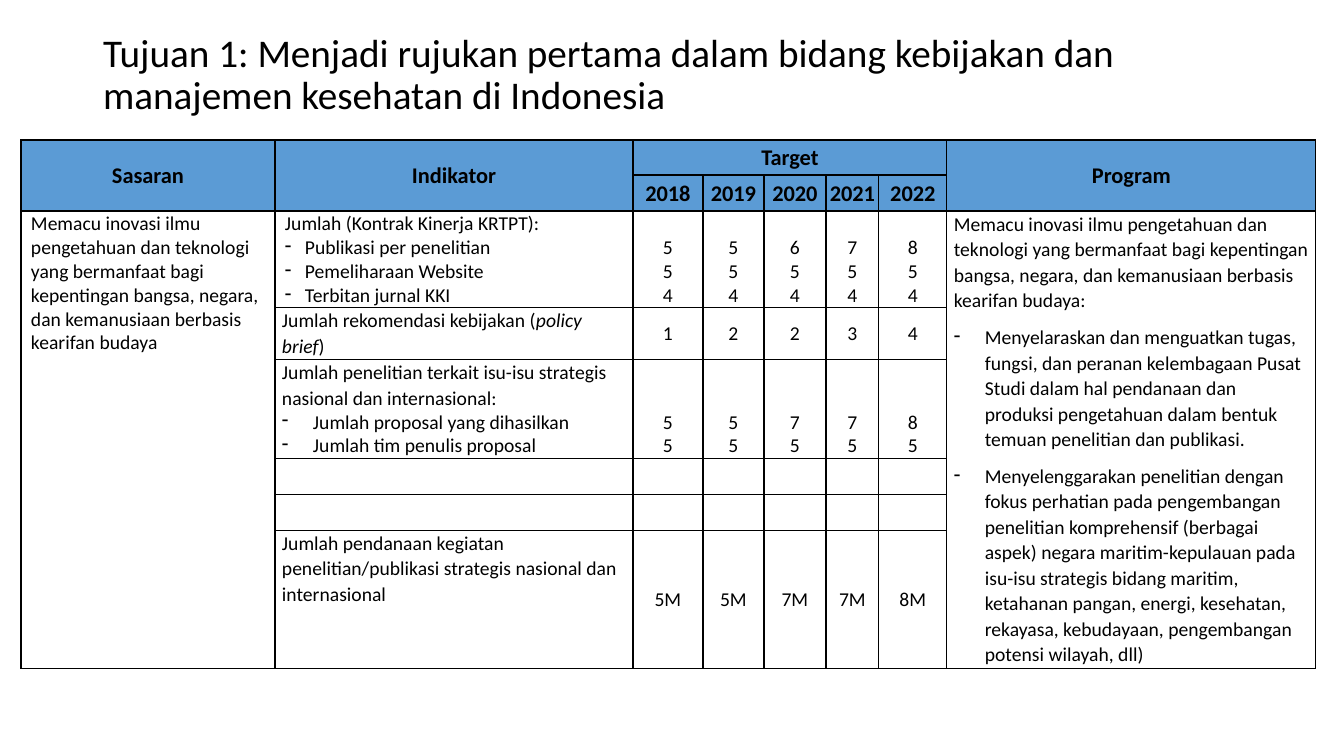
from lxml.etree import SubElement
from pptx import Presentation
from pptx.dml.color import RGBColor
from pptx.enum.text import MSO_ANCHOR, MSO_AUTO_SIZE, PP_ALIGN
from pptx.oxml.ns import qn
from pptx.util import Pt

COLORS = {"text": "000000", "header": "5B9BD5", "body": "FFFFFF", "border": "000000"}
COLUMNS = [254, 358, 70, 61, 62, 53, 68, 369]
ROWS = [35, 36, 96, 52, 98, 36, 36, 138]
YEARS = ["2018", "2019", "2020", "2021", "2022"]
GOAL = ("Memacu inovasi ilmu pengetahuan dan teknologi yang bermanfaat bagi kepentingan bangsa, "
        "negara, dan kemanusiaan berbasis kearifan budaya")
PROGRAM = [
    GOAL + ":",
    "- Menyelaraskan dan menguatkan tugas, fungsi, dan peranan kelembagaan Pusat Studi dalam hal "
    "pendanaan dan produksi pengetahuan dalam bentuk temuan penelitian dan publikasi.",
    "- Menyelenggarakan penelitian dengan fokus perhatian pada pengembangan penelitian komprehensif "
    "(berbagai aspek) negara maritim-kepulauan pada isu-isu strategis bidang maritim, ketahanan "
    "pangan, energi, kesehatan, rekayasa, kebudayaan, pengembangan potensi wilayah, dll)",
]
CONTRACT = ["Jumlah (Kontrak Kinerja KRTPT):", "- Publikasi per penelitian",
            "- Pemeliharaan Website", "- Terbitan jurnal KKI"]
POLICY = ["Jumlah rekomendasi kebijakan (*policy brief*)"]
RESEARCH = ["Jumlah penelitian terkait isu-isu strategis nasional dan internasional:",
            "- Jumlah proposal yang dihasilkan", "- Jumlah tim penulis proposal"]
FUNDING = ["Jumlah pendanaan kegiatan penelitian/publikasi strategis nasional dan internasional"]
TARGETS = {
    2: ["5 5 4", "5 5 4", "6 5 4", "7 5 4", "8 5 4"],
    3: ["1", "2", "2", "3", "4"],
    4: ["5 5", "5 5", "7 5", "7 5", "8 5"],
    7: ["5M", "5M", "7M", "7M", "8M"],
}


class SlideBuilder:
    scale = 914400 / 100.8
    font = "Calibri"

    def __init__(self, deck):
        self.page = deck.slides.add_slide(deck.slide_layouts[5])

    @classmethod
    def px(cls, length):
        return round(length * cls.scale)

    def style(self, para, size, bold=False):
        for span in para.runs:
            span.font.name = self.font
            span.font.size = Pt(size)
            span.font.bold = bold
            span.font.color.rgb = RGBColor.from_string(COLORS["text"])

    def title(self, text, left, top, width, height):
        box = self.page.shapes.title
        box.left, box.top, box.width, box.height = map(self.px, (left, top, width, height))
        frame = box.text_frame
        frame.text = text
        frame.word_wrap = True
        frame.auto_size = MSO_AUTO_SIZE.NONE
        frame.vertical_anchor = MSO_ANCHOR.MIDDLE
        para = frame.paragraphs[0]
        para.alignment = PP_ALIGN.LEFT
        para.line_spacing = 0.9
        self.style(para, 28)

    def table(self, left, top, columns, rows):
        frame = self.page.shapes.add_table(
            len(rows), len(columns), self.px(left), self.px(top),
            self.px(sum(columns)), self.px(sum(rows)))
        table = frame.table
        table.first_row = table.horz_banding = False
        for column, width in zip(table.columns, columns):
            column.width = self.px(width)
        for index, (row, height) in enumerate(zip(table.rows, rows)):
            row.height = self.px(height)
            for cell in row.cells:
                self.frame_cell(cell, COLORS["header" if index < 2 else "body"])
        return table

    def frame_cell(self, cell, color):
        cell.margin_left = cell.margin_right = cell.margin_top = self.px(1)
        cell.margin_bottom = 0
        properties = cell._tc.get_or_add_tcPr()
        for side in ("a:lnL", "a:lnR", "a:lnT", "a:lnB"):
            line = SubElement(properties, qn(side), w=str(Pt(1)))
            fill = SubElement(line, qn("a:solidFill"))
            SubElement(fill, qn("a:srgbClr"), val=COLORS["border"])
        cell.fill.solid()
        cell.fill.fore_color.rgb = RGBColor.from_string(color)

    def centered(self, cell, lines, size=14, bold=False, anchor=MSO_ANCHOR.MIDDLE):
        cell.text_frame.text = "\n".join(lines)
        cell.vertical_anchor = anchor
        for para in cell.text_frame.paragraphs:
            para.alignment = PP_ALIGN.CENTER
            self.style(para, size, bold)

    def prose(self, cell, lines, inset=7, indent=0, hanging=(31, -31),
              spacing=1.07, bullet_spacing=1.0, after=0, anchor=MSO_ANCHOR.TOP):
        cell.vertical_anchor = anchor
        cell.margin_left = cell.margin_right = self.px(inset)
        cell.margin_top = self.px(1 if inset == 1 else 0)
        frame = cell.text_frame
        for index, line in enumerate(lines):
            para = frame.add_paragraph() if index else frame.paragraphs[0]
            bulleted = line.startswith("- ")
            parts = line.removeprefix("- ").split("*")
            para.text = parts[0]
            for position, part in enumerate(parts[1:], 1):
                span = para.add_run()
                span.text = part
                span.font.italic = position % 2 == 1
            para.line_spacing = bullet_spacing if bulleted else spacing
            para.space_after = Pt(after)
            properties = para._p.get_or_add_pPr()
            margin, first = hanging if bulleted else (indent, 0)
            properties.set("marL", str(self.px(margin)))
            properties.set("indent", str(self.px(first)))
            if bulleted:
                SubElement(properties, qn("a:buChar"), char="-")
            self.style(para, 14)


def main():
    deck = Presentation()
    deck.slide_width, deck.slide_height = SlideBuilder.px(1344), SlideBuilder.px(756)
    builder = SlideBuilder(deck)
    builder.title("Tujuan 1: Menjadi rujukan pertama dalam bidang kebijakan dan "
                  "manajemen kesehatan di Indonesia", 93, 40, 1127, 72)
    table = builder.table(21, 140, COLUMNS, ROWS)

    for column, heading in ((0, "Sasaran"), (1, "Indikator"), (7, "Program")):
        table.cell(0, column).merge(table.cell(1, column))
        builder.centered(table.cell(0, column), [heading], 16, True)
    table.cell(0, 2).merge(table.cell(0, 6))
    builder.centered(table.cell(0, 2), ["Target"], 16, True)
    for column, year in enumerate(YEARS, 2):
        builder.centered(table.cell(1, column), [year], 16, True)

    for column in (0, 7):
        table.cell(2, column).merge(table.cell(7, column))
    builder.prose(table.cell(2, 0), [GOAL], inset=1, indent=9, spacing=1.0)
    builder.prose(table.cell(2, 7), PROGRAM, bullet_spacing=1.07, after=8)
    builder.prose(table.cell(2, 1), CONTRACT, inset=1, indent=9, hanging=(29, -20),
                  spacing=1.0, anchor=MSO_ANCHOR.MIDDLE)
    for row, lines in ((3, POLICY), (4, RESEARCH), (7, FUNDING)):
        builder.prose(table.cell(row, 1), lines)

    for row, values in TARGETS.items():
        for column, value in enumerate(values, 2):
            lines = value.split()
            anchor = MSO_ANCHOR.BOTTOM if len(lines) > 1 else MSO_ANCHOR.MIDDLE
            builder.centered(table.cell(row, column), lines, anchor=anchor)

    deck.save("out.pptx")


if __name__ == "__main__":
    main()
